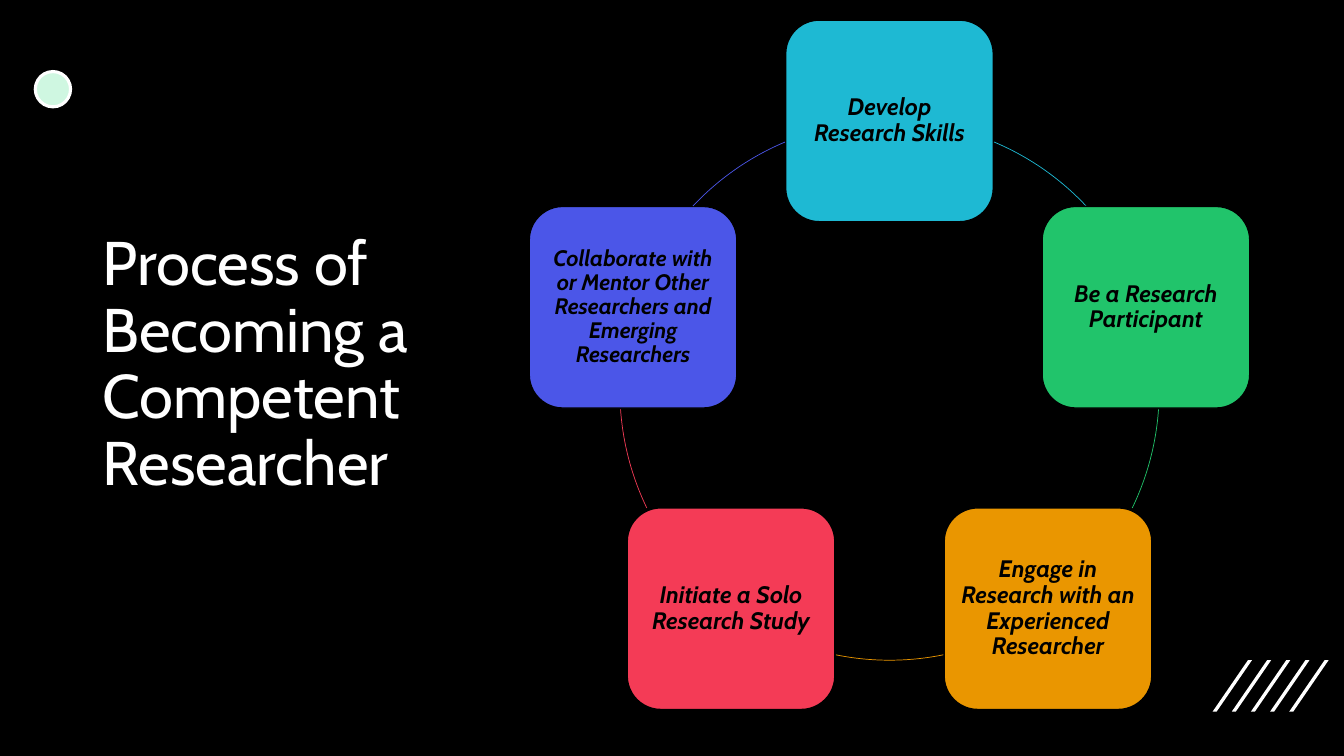
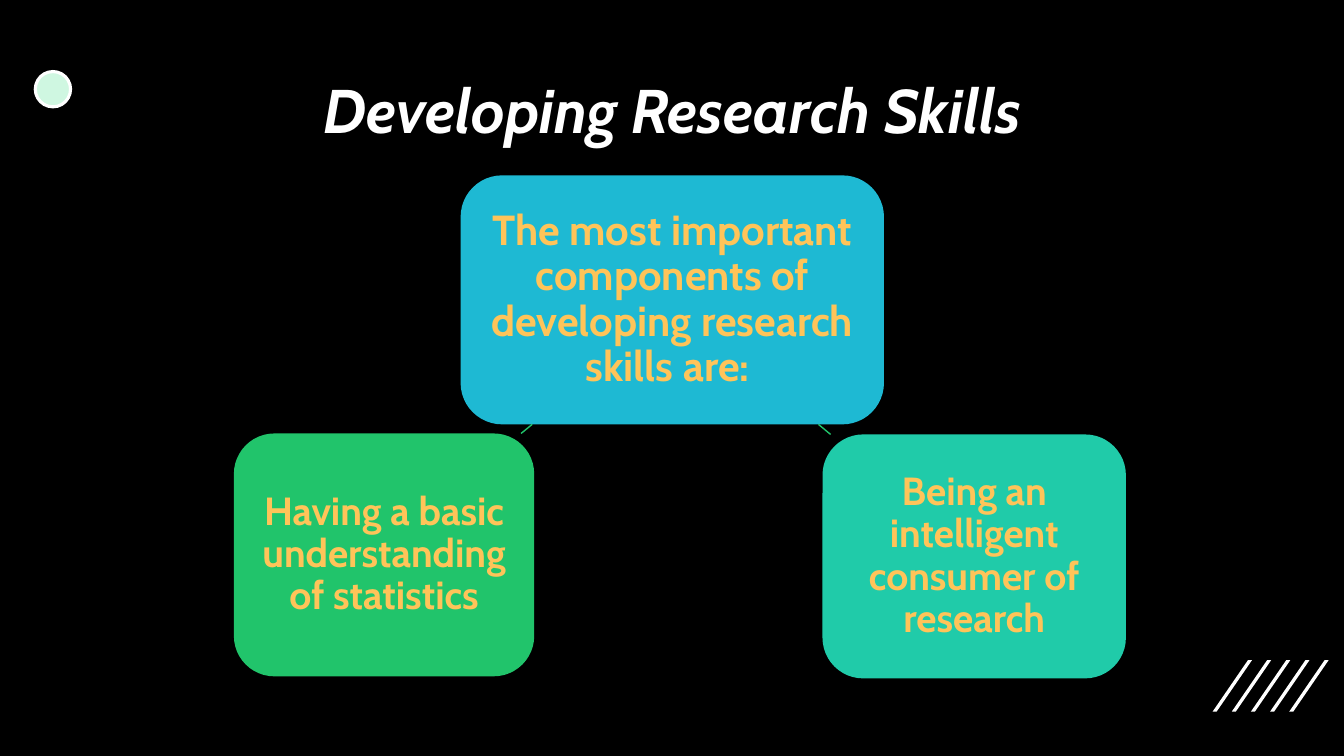
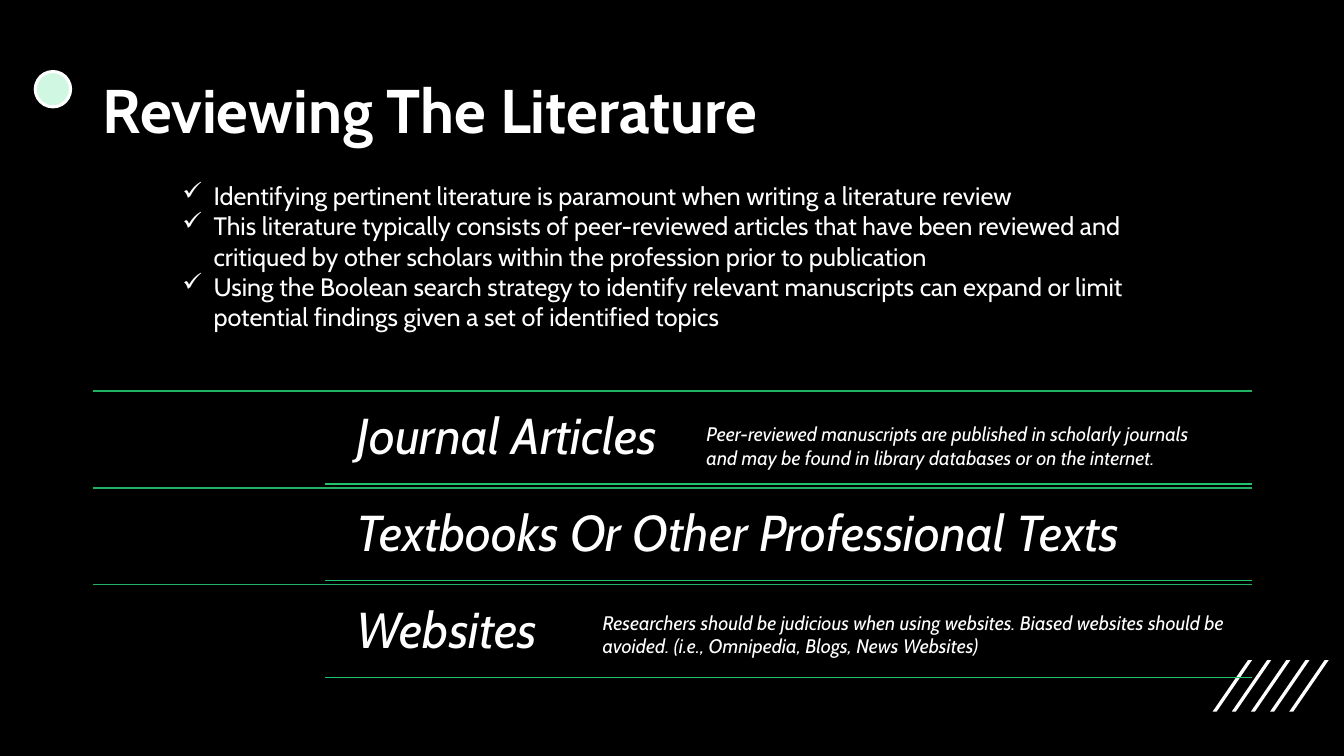
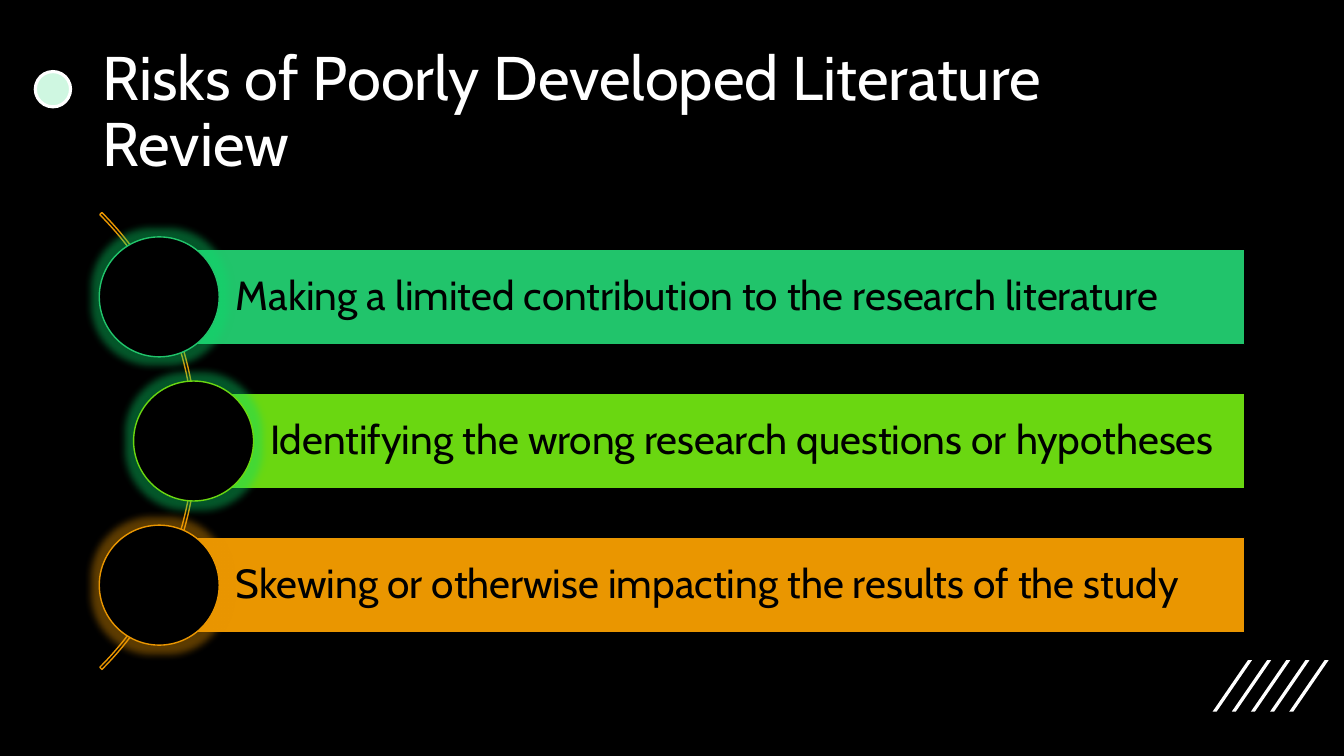
from math import cos, radians, sin, sqrt

from lxml.etree import SubElement
from pptx import Presentation
from pptx.dml.color import RGBColor
from pptx.enum.shapes import MSO_CONNECTOR, MSO_SHAPE
from pptx.enum.text import MSO_ANCHOR, PP_ALIGN
from pptx.oxml.ns import qn
from pptx.util import Inches, Pt

BLACK = RGBColor(0x00, 0x00, 0x00)
WHITE = RGBColor(0xFF, 0xFF, 0xFF)
MINT = RGBColor(0xCF, 0xF7, 0xE1)
CYAN = RGBColor(0x1E, 0xB9, 0xD3)
GREEN = RGBColor(0x21, 0xC4, 0x6B)
DARK_GREEN = RGBColor(0x1E, 0xB2, 0x61)
GLOW_GREEN = RGBColor(0x0B, 0xDC, 0x6B)
TEAL = RGBColor(0x20, 0xCB, 0xA9)
LIME = RGBColor(0x6A, 0xD7, 0x11)
ORANGE = RGBColor(0xEA, 0x96, 0x00)
RED = RGBColor(0xF4, 0x3B, 0x56)
INDIGO = RGBColor(0x4B, 0x56, 0xE8)
AMBER = RGBColor(0xFF, 0xC4, 0x59)

FONT = "Cabin"
BULLET, BULLET_FONT = "✓", "OpenSymbol"
SLIDE_HEIGHT = 7.5
SLIDE_WIDTH = SLIDE_HEIGHT * 16 / 9
MARGIN, CONTENT_WIDTH = 0.92, 11.5
TITLE_BOX = (MARGIN, 0.4, CONTENT_WIDTH, 1.45)
SIDE_TITLE_BOX = (MARGIN, 1.31, 3.4, 4.63)

CYCLE_TITLE = ["Process of Becoming a ", "Competent Researcher"]
CYCLE_STEPS = [
    ("Develop Research Skills", CYAN, 17, (292.8, 316.8)),
    ("Be a Research Participant", GREEN, 17, (4, 25.8)),
    ("Engage in Research with an Experienced Researcher", ORANGE, 17, (78.5, 101.5)),
    ("Initiate a Solo Research Study", RED, 17, (154.2, 176)),
    ("Collaborate with or Mentor Other Researchers and Emerging Researchers",
     INDIGO, 16, (223.2, 247.2)),
]

SKILLS_TITLE = ["Developing Research Skills"]
SKILL_CARDS = [
    ("The most important components of developing research skills are: ",
     (4.57, 1.74, 4.2, 2.47), CYAN, 30),
    ("Being an intelligent consumer of research", (8.16, 4.31, 3.01, 2.42), TEAL, 28),
    ("Having a basic understanding of statistics", (2.32, 4.3, 2.98, 2.41), GREEN, 28),
]
SKILL_LINKS = [((8.12, 4.21), (8.24, 4.31)), ((5.28, 4.21), (5.17, 4.3))]

LITERATURE_TITLE = ["Reviewing The Literature"]
LITERATURE_POINTS = [
    "Identifying pertinent literature is paramount when writing a literature review",
    "This literature typically consists of peer-reviewed articles that have been reviewed and "
    "critiqued by other scholars within the profession prior to publication",
    "Using the Boolean search strategy to identify relevant manuscripts can expand or limit "
    "potential findings given a set of identified topics",
]
SOURCES = ["Journal Articles", "Textbooks Or Other Professional Texts", "Websites"]
SOURCE_NOTES = [
    ("Researchers should be judicious when using websites. Biased websites should be avoided. "
     "(i.e., Omnipedia, Blogs, News Websites)", (5.38, 6.01, 7.39, 0.57), 1),
    ("Peer-reviewed manuscripts are published in scholarly journals and may be found in "
     "library databases or on the internet.", (5.91, 4.14, 6.32, 0.57), 2),
]

RISKS_TITLE = ["Risks of Poorly Developed Literature Review"]
RISKS = [
    ("Making a limited contribution to the research literature", GREEN, GLOW_GREEN),
    ("Identifying the wrong research questions or hypotheses", LIME, GLOW_GREEN),
    ("Skewing or otherwise impacting the results of the study", ORANGE, ORANGE),
]


def paint(shape, fill=None, line=None, width=1):
    shape.shadow.inherit = False
    if fill is None:
        shape.fill.background()
    else:
        shape.fill.solid()
        shape.fill.fore_color.rgb = fill
    if line is None:
        shape.line.fill.background()
    else:
        shape.line.color.rgb = line
        shape.line.width = Pt(width)


def add_preset(slide, preset, box, fill=None, line=None, width=1):
    shape = slide.shapes.add_shape(preset, *map(Inches, box))
    paint(shape, fill, line, width)
    return shape


def add_arc(slide, preset, box, angles, line, width):
    arc = add_preset(slide, preset, box, line=line, width=width)
    for index, angle in enumerate(angles):
        arc.adjustments[index] = angle * 0.6
    return arc


def add_stripe(slide, points):
    corners = [(Inches(x), Inches(y)) for x, y in points]
    builder = slide.shapes.build_freeform(*corners[0])
    builder.add_line_segments(corners[1:])
    paint(builder.convert_to_shape(), WHITE)


def add_line(slide, start, end, color):
    connector = slide.shapes.add_connector(
        MSO_CONNECTOR.STRAIGHT, *map(Inches, start + end))
    connector.line.color.rgb = color
    connector.line.width = Pt(1)
    SubElement(connector._element.spPr, qn("a:effectLst"))


def add_run(paragraph, text, size, color, bold, italic):
    run = paragraph.add_run()
    run.text = text
    run.font.name = FONT
    run.font.size = Pt(size)
    run.font.bold = bold
    run.font.italic = italic
    run.font.color.rgb = color


def write(shape, paragraphs, size, color=WHITE, bold=False, italic=False,
          align=PP_ALIGN.LEFT, anchor=MSO_ANCHOR.TOP, insets=(0.1, 0.05, 0.1, 0.05),
          spacing=0.9, level=0, indent=0, hanging=0, bullet=None):
    frame = shape.text_frame
    frame.word_wrap = True
    frame.vertical_anchor = anchor
    (frame.margin_left, frame.margin_top,
     frame.margin_right, frame.margin_bottom) = map(Inches, insets)
    for index, lines in enumerate(paragraphs):
        paragraph = frame.add_paragraph() if index else frame.paragraphs[0]
        properties = paragraph._p.get_or_add_pPr()
        properties.set("marL", str(Inches(indent)))
        properties.set("indent", str(-Inches(hanging)))
        if bullet:
            SubElement(properties, qn("a:buFont")).set("typeface", BULLET_FONT)
            SubElement(properties, qn("a:buChar")).set("char", bullet)
        paragraph.level = level
        paragraph.alignment = align
        paragraph.line_spacing = spacing
        for number, line in enumerate(lines):
            if number:
                paragraph.add_line_break()
            add_run(paragraph, line, size, color, bold, italic)


def add_text(slide, box, paragraphs, size, **style):
    write(slide.shapes.add_textbox(*map(Inches, box)), paragraphs, size, **style)


def add_card(slide, box, text, size, fill, inset, line=None, **style):
    card = add_preset(slide, MSO_SHAPE.ROUNDED_RECTANGLE, box, fill, line)
    write(card, [[text]], size, bold=True, align=PP_ALIGN.CENTER,
          anchor=MSO_ANCHOR.MIDDLE, insets=(inset,) * 4, **style)


def add_glow(shape, color):
    effects = shape._element.spPr.find(qn("a:effectLst"))
    glow = SubElement(effects, qn("a:glow"), rad=str(Pt(11)))
    tint = SubElement(glow, qn("a:srgbClr"), val=str(color))
    SubElement(tint, qn("a:alpha"), val="40000")


def new_slide(presentation, title, box=TITLE_BOX, **style):
    slide = presentation.slides.add_slide(presentation.slide_layouts[6])
    top, bottom = 6.55, 7.06
    for stripe in range(5):
        left = 12.03 + 0.19 * stripe
        add_stripe(slide, [(left + 0.04, bottom), (left, bottom),
                           (left + 0.35, top), (left + 0.39, top)])
    add_preset(slide, MSO_SHAPE.OVAL, (0.35, 0.71, 0.35, 0.35), MINT, WHITE, 2.25)
    add_text(slide, box, [title], 44, anchor=MSO_ANCHOR.MIDDLE, **style)
    return slide


def build_cycle(presentation):
    slide = new_slide(presentation, CYCLE_TITLE, SIDE_TITLE_BOX)
    left, top, diameter = 6.15, 1.2, 5.35
    radius = diameter / 2
    width, height = 2.06, 2
    for index, (text, color, size, angles) in enumerate(CYCLE_STEPS):
        angle = radians(360 / len(CYCLE_STEPS) * index - 90)
        box = (left + radius + radius * cos(angle) - width / 2,
               top + radius + radius * sin(angle) - height / 2, width, height)
        add_card(slide, box, text, size, color, 0.07, BLACK, color=BLACK, italic=True)
        add_arc(slide, MSO_SHAPE.ARC, (left, top, diameter, diameter), angles, color, 0.5)


def build_skills(presentation):
    slide = new_slide(presentation, SKILLS_TITLE, bold=True, italic=True,
                      align=PP_ALIGN.CENTER)
    for text, box, fill, size in SKILL_CARDS:
        add_card(slide, box, text, size, fill, 0.08, color=AMBER)
    for start, end in SKILL_LINKS:
        add_line(slide, start, end, GREEN)


def build_literature(presentation):
    slide = new_slide(presentation, LITERATURE_TITLE, bold=True)
    right = MARGIN + CONTENT_WIDTH
    column = MARGIN + CONTENT_WIDTH * 0.2
    for index, source in enumerate(SOURCES):
        top = 3.88 + 0.96 * index
        bottom = top + 0.92
        add_line(slide, (MARGIN, top), (right, top), DARK_GREEN)
        add_text(slide, (column + 0.17, top + 0.05, right - column - 0.17, 0.87),
                 [[source]], 36, italic=True, insets=(0.15,) * 4)
        add_line(slide, (column, bottom), (right, bottom), GREEN)
    add_text(slide, (1.21, 1.74, 10.38, 1.62), [[point] for point in LITERATURE_POINTS],
             18, spacing=1.0, level=1, indent=0.81, hanging=0.31, bullet=BULLET)
    for text, box, level in SOURCE_NOTES:
        add_text(slide, box, [[text]], 14, italic=True, spacing=1.0,
                 level=level, indent=0.5 * level)


def build_risks(presentation):
    slide = new_slide(presentation, RISKS_TITLE)
    left, top, size, thickness = -4.46, 1.17, 6.41, 0.03
    radius = size / 2 - thickness
    center_x, center_y = left + size / 2, top + size / 2
    arc = add_arc(slide, MSO_SHAPE.BLOCK_ARC, (left, top, size, size), (315, 45), ORANGE, 1)
    arc.adjustments[2] = thickness / size
    right, height, diameter = 12.35, 0.95, 1.19
    for index, (text, color, glow) in enumerate(RISKS):
        offset = 1.43 * (index - 1)
        middle = center_y + offset
        bar_left = center_x + sqrt(radius ** 2 - offset ** 2)
        bar = add_preset(slide, MSO_SHAPE.RECTANGLE,
                         (bar_left, middle - height / 2, right - bar_left, height),
                         color, BLACK)
        write(bar, [[text]], 29, color=BLACK, anchor=MSO_ANCHOR.MIDDLE,
              insets=(0.76, 0.08, 0.08, 0.08))
        circle = add_preset(slide, MSO_SHAPE.OVAL,
                            (bar_left - diameter / 2, middle - diameter / 2,
                             diameter, diameter), BLACK, color)
        add_glow(circle, glow)


def main():
    presentation = Presentation()
    presentation.slide_width = Inches(SLIDE_WIDTH)
    presentation.slide_height = Inches(SLIDE_HEIGHT)
    background = presentation.slide_master.background.fill
    background.solid()
    background.fore_color.rgb = BLACK
    for build in (build_cycle, build_skills, build_literature, build_risks):
        build(presentation)
    presentation.save("out.pptx")


if __name__ == "__main__":
    main()
